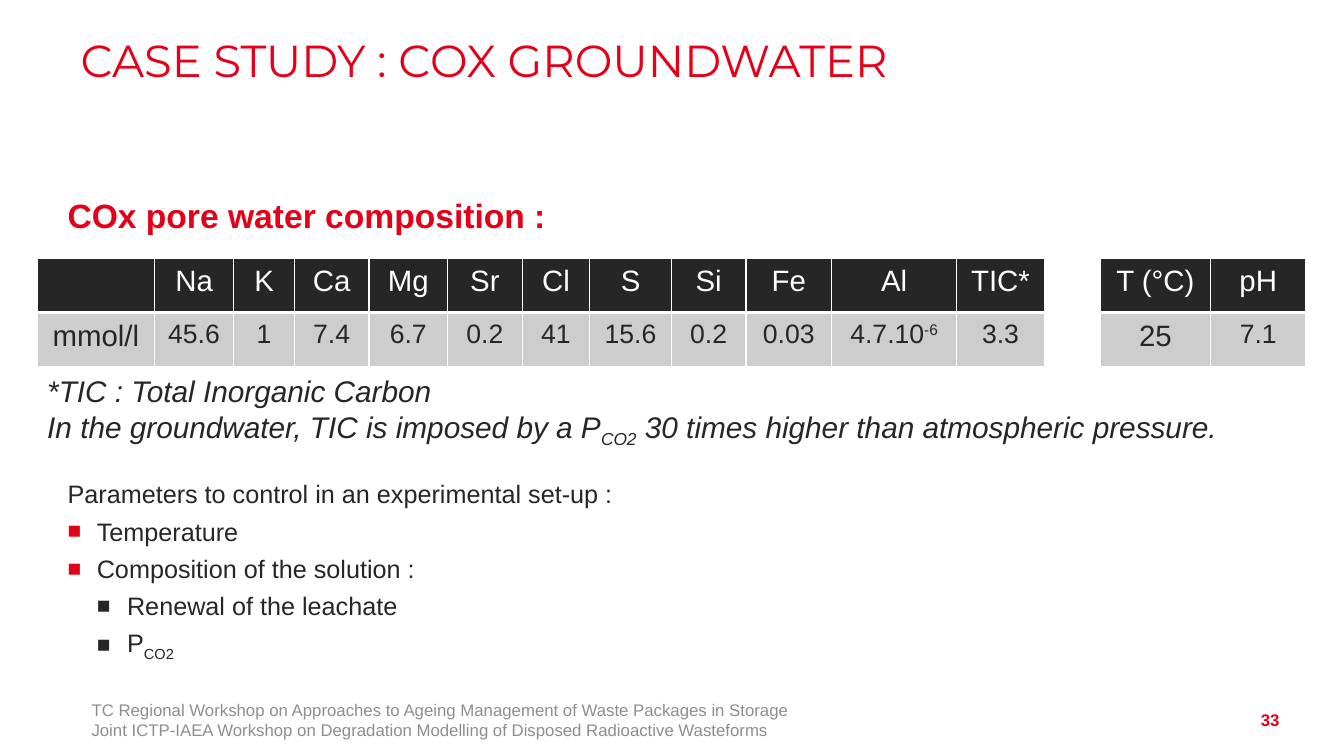
from lxml import etree
from pptx import Presentation
from pptx import util as u
from pptx.dml.color import RGBColor
from pptx.enum import text
from pptx.oxml.ns import qn

RED, DARK, LIGHT, GREY, WHITE = "E50019", "262626", "CDCDCD", "8E8E8E", "FFFFFF"
WIDTH, HEIGHT = 13.33, 7.5
ROW_HEIGHT = 0.54
LEFT, CENTER = text.PP_ALIGN.LEFT, text.PP_ALIGN.CENTER
RIGHT, JUSTIFY = text.PP_ALIGN.RIGHT, text.PP_ALIGN.JUSTIFY
TOP, MIDDLE, BOTTOM = text.MSO_ANCHOR.TOP, text.MSO_ANCHOR.MIDDLE, text.MSO_ANCHOR.BOTTOM

WATER = [("", "mmol/l", 1.16), ("Na", "45.6", 0.79), ("K", "1", 0.6), ("Ca", "7.4", 0.74),
         ("Mg", "6.7", 0.78), ("Sr", "0.2", 0.74), ("Cl", "41", 0.67), ("S", "15.6", 0.81),
         ("Si", "0.2", 0.74), ("Fe", "0.03", 0.85), ("Al", [("4.7.10", 30), ("-6", 30)], 1.24),
         ("TIC*", "3.3", 0.87)]
WATER[10] = ("Al", [("4.7.10", 0), ("-6", 30)], 1.24)
CONDITIONS = [("T (°C)", "25", 1.1), ("pH", "7.1", 0.94)]
PCO2 = [("P", 0), ("CO2", -25)]
PARAMETERS = [("Parameters to control in an experimental set-up :", 0), ("Temperature", 1),
              ("Composition of the solution :", 1), ("Renewal of the leachate", 2), (PCO2, 2)]
INDENTS = {1: (0.29, 0.29, RED), 2: (0.59, 0.3, DARK)}


def color(value):
    """Turn a hex string into a colour."""
    return RGBColor.from_string(value)


def write(paragraph, content, size=18, ink=DARK, font="Arial", bold=False, italic=False,
          align=LEFT, before=0, spacing=None):
    """Write a string, or (text, baseline) pairs, with one format."""
    paragraph.alignment = align
    paragraph.space_before = u.Pt(before)
    if spacing:
        paragraph.line_spacing = spacing
    for words, baseline in [(content, 0)] if isinstance(content, str) else content:
        run = paragraph.add_run()
        run.text = words
        run.font.name, run.font.size = font, u.Pt(size)
        run.font.bold, run.font.italic = bold, italic
        run.font.color.rgb = color(ink)
        if baseline:
            run.font._element.set("baseline", str(baseline * 1000))


def add_bullet(paragraph, indent, hanging, ink):
    """Give a paragraph a square bullet with a hanging indent."""
    properties = paragraph._p.get_or_add_pPr()
    properties.set("marL", str(u.Inches(indent)))
    properties.set("indent", str(-u.Inches(hanging)))
    bullet_color = etree.SubElement(properties, qn("a:buClr"))
    etree.SubElement(bullet_color, qn("a:srgbClr"), val=ink)
    etree.SubElement(properties, qn("a:buSzPct"), val="90000")
    etree.SubElement(properties, qn("a:buFont"), typeface="Arial")
    etree.SubElement(properties, qn("a:buChar"), char="■")


def add_text(slide, box, lines, anchor=TOP, inset=0.0, **style):
    """Place a wrapped text box with one paragraph per line and return its paragraphs."""
    frame = slide.shapes.add_textbox(*map(u.Inches, box)).text_frame
    frame.word_wrap, frame.vertical_anchor = True, anchor
    frame.margin_left = frame.margin_right = u.Inches(inset)
    paragraphs = []
    for index, line in enumerate(lines):
        paragraph = frame.add_paragraph() if index else frame.paragraphs[0]
        write(paragraph, line, **style)
        paragraphs.append(paragraph)
    return paragraphs


def add_borders(cell, bottom):
    """Draw white cell borders with the given bottom width in points."""
    properties = cell._tc.get_or_add_tcPr()
    for index, (side, width) in enumerate([("L", 1), ("R", 1), ("T", 1), ("B", bottom)]):
        line = etree.Element(qn(f"a:ln{side}"), w=str(u.Pt(width)))
        fill = etree.SubElement(line, qn("a:solidFill"))
        etree.SubElement(fill, qn("a:srgbClr"), val=WHITE)
        properties.insert(index, line)


def add_values(slide, left, top, columns):
    """Place a two-row table from (heading, value, width) columns."""
    total = sum(width for _, _, width in columns)
    table = slide.shapes.add_table(2, len(columns), *map(u.Inches, (left, top, total, 2 * ROW_HEIGHT))).table
    for row in table.rows:
        row.height = u.Inches(ROW_HEIGHT)
    for column, (heading, value, width) in enumerate(columns):
        table.columns[column].width = u.Inches(width)
        value_size = 19 if column else 21
        formats = [(heading, 21, WHITE, DARK, 3), (value, value_size, DARK, LIGHT, 1)]
        for row, (content, size, ink, background, bottom) in enumerate(formats):
            cell = table.cell(row, column)
            cell.margin_left = cell.margin_right = u.Inches(0.13)
            cell.margin_top = cell.margin_bottom = u.Inches(0.07)
            cell.fill.solid()
            cell.fill.fore_color.rgb = color(background)
            add_borders(cell, bottom)
            write(cell.text_frame.paragraphs[0], content, size=size, ink=ink, align=CENTER)


def add_heading(slide, box):
    """Place the slide title."""
    add_text(slide, box, ["CASE STUDY : COX GROUNDWATER"], size=32, ink=RED,
             font="Montserrat", spacing=0.9)


def add_composition(slide, left, top, width):
    """Place the composition heading, both tables and the note under them."""
    add_text(slide, (left + 0.3, top, width - 0.3, 0.7), ["COx pore water composition :"],
             anchor=BOTTOM, size=24, ink=RED, bold=True)
    add_values(slide, left, top + 0.88, WATER)
    add_values(slide, left + 10.54, top + 0.88, CONDITIONS)
    note = ["*TIC : Total Inorganic Carbon",
            [("In the groundwater, TIC is imposed by a P", 0), ("CO2", -25),
             (" 30 times higher than atmospheric pressure.", 0)]]
    add_text(slide, (left, top + 1.97, width, 0.82), note, inset=0.1, size=21.3, italic=True)


def add_parameters(slide, box):
    """Place the list of parameters with two bullet levels."""
    paragraphs = add_text(slide, box, [line for line, _ in PARAMETERS], align=JUSTIFY)
    for paragraph, (_, level) in zip(paragraphs, PARAMETERS):
        if level:
            paragraph.space_before = u.Pt(5)
            add_bullet(paragraph, *INDENTS[level])


def add_footer(slide, top, height):
    """Place the workshop names and the page number."""
    workshops = ["TC Regional Workshop on Approaches to Ageing Management of Waste Packages in Storage",
                 "Joint ICTP-IAEA Workshop on Degradation Modelling of Disposed Radioactive Wasteforms"]
    add_text(slide, (0.81, top, 9.67, height), workshops, anchor=MIDDLE, inset=0.1, size=12, ink=GREY)
    add_text(slide, (12.03, top, 0.76, height), ["33"], anchor=MIDDLE, inset=0.1, size=12,
             ink=RED, bold=True, align=RIGHT)


def main():
    """Build the slide and save it."""
    presentation = Presentation()
    presentation.slide_width, presentation.slide_height = u.Inches(WIDTH), u.Inches(HEIGHT)
    slide = presentation.slides.add_slide(presentation.slide_layouts[6])
    add_heading(slide, (0.8, 0.34, 11.73, 0.95))
    add_composition(slide, 0.37, 1.68, 12.59)
    add_parameters(slide, (0.67, 4.7, 12.29, 2.61))
    add_footer(slide, 6.94, 0.4)
    presentation.save("out.pptx")


if __name__ == "__main__":
    main()
